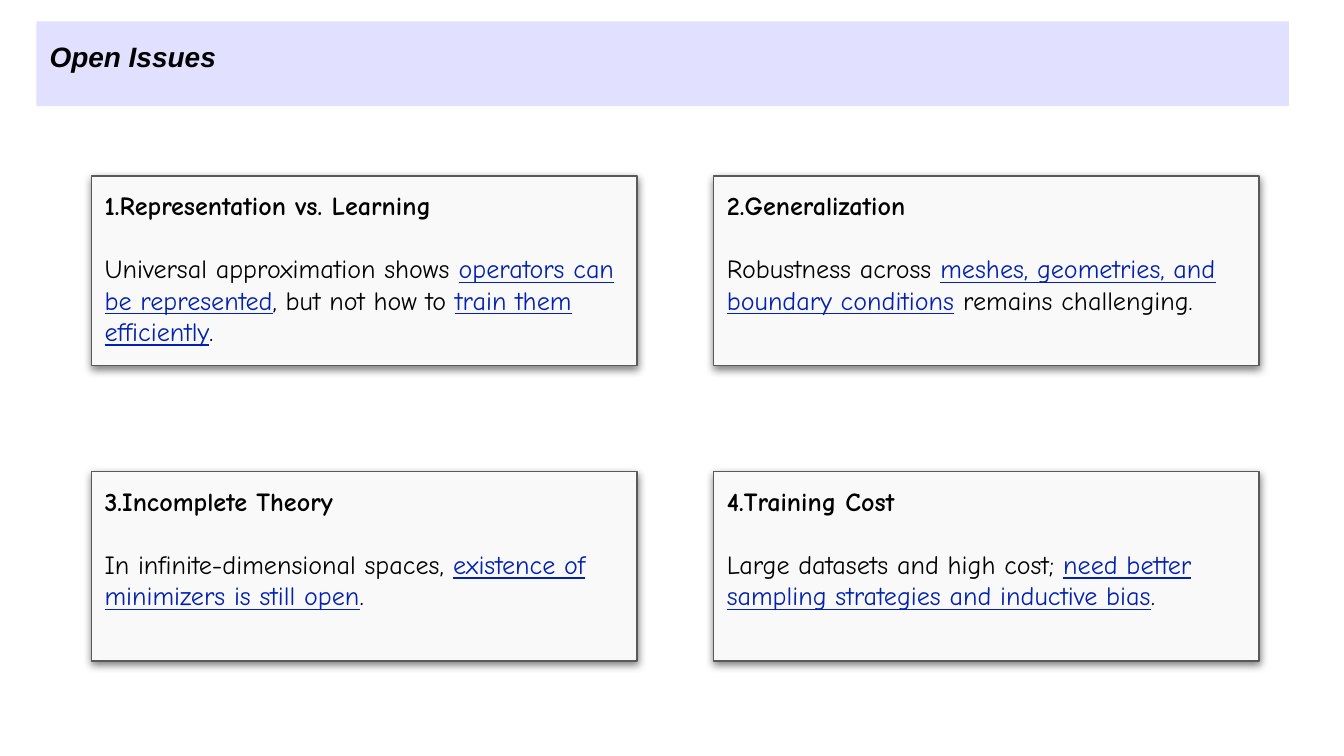
from lxml.etree import SubElement
from pptx import Presentation
from pptx.dml.color import RGBColor
from pptx.enum.shapes import MSO_SHAPE
from pptx.enum.text import MSO_ANCHOR, PP_ALIGN
from pptx.oxml.ns import qn
from pptx.util import Inches, Pt

BLACK = RGBColor(0x00, 0x00, 0x00)
LAVENDER = RGBColor(0xE1, 0xE0, 0xFF)
PAPER = RGBColor(0xF9, 0xF9, 0xF9)
GRAY = RGBColor(0x59, 0x59, 0x59)
BLUE = RGBColor(0x02, 0x20, 0xB2)

# Each issue: heading, then (phrase, is key phrase) pairs
ISSUES = [
    ("1.Representation vs. Learning", [
        ("Universal approximation shows ", False),
        ("operators can be represented", True),
        (", but not how to ", False),
        ("train them efficiently", True),
        (".", False)]),
    ("2.Generalization", [
        ("Robustness across ", False),
        ("meshes, geometries, and boundary conditions", True),
        (" remains challenging.", False)]),
    ("3.Incomplete Theory", [
        ("In infinite-dimensional spaces, ", False),
        ("existence of minimizers is still open", True),
        (".", False)]),
    ("4.Training Cost", [
        ("Large datasets and high cost; ", False),
        ("need better sampling strategies and inductive bias", True),
        (".", False)]),
]


class IssueSlide:
    title_font, title_size = "Arial", Pt(15)
    card_font, card_size = "Comic Neue", Pt(14)
    inset = Inches(0.1)

    def __init__(self, slide):
        self.slide = slide

    def box(self, left, top, width, height, fill):
        """Add a plain rectangle with top-left text."""
        box = self.slide.shapes.add_shape(
            MSO_SHAPE.RECTANGLE, Inches(left), Inches(top),
            Inches(width), Inches(height))
        box.shadow.inherit = False
        box.fill.solid()
        box.fill.fore_color.rgb = fill
        box.line.fill.background()
        frame = box.text_frame
        frame.word_wrap = True
        frame.vertical_anchor = MSO_ANCHOR.TOP
        frame.margin_left = frame.margin_right = self.inset
        frame.margin_top = frame.margin_bottom = self.inset
        frame.paragraphs[0].alignment = PP_ALIGN.LEFT
        return box

    def run(self, paragraph, text, font, size, color=BLACK, bold=False):
        run = paragraph.add_run()
        run.text = text
        run.font.name = font
        run.font.size = size
        run.font.bold = bold
        run.font.color.rgb = color
        return run

    def drop_shadow(self, shape):
        effects = shape.element.spPr.find(qn("a:effectLst"))
        shadow = SubElement(
            effects, qn("a:outerShdw"), blurRad=str(Pt(4.5)),
            dist=str(Pt(1.5)), dir="5400000", algn="bl", rotWithShape="0")
        color = SubElement(shadow, qn("a:srgbClr"), val=str(BLACK))
        SubElement(color, qn("a:alpha"), val="50000")

    def title(self, text):
        banner = self.box(0.27, 0.16, 9.32, 0.63, LAVENDER)
        paragraph = banner.text_frame.paragraphs[0]
        paragraph.line_spacing = 1.15
        run = self.run(paragraph, text, self.title_font, self.title_size,
                       bold=True)
        run.font.italic = True

    def card(self, left, top, heading, phrases):
        card = self.box(left, top, 4.06, 1.41, PAPER)
        card.line.color.rgb = GRAY
        card.line.width = Pt(0.75)
        self.drop_shadow(card)
        frame = card.text_frame
        self.run(frame.paragraphs[0], heading, self.card_font,
                 self.card_size, bold=True)
        body = frame.add_paragraph()
        body.alignment = PP_ALIGN.LEFT
        body.space_before = Pt(17)
        for text, is_key in phrases:
            run = self.run(body, text, self.card_font, self.card_size,
                           BLUE if is_key else BLACK)
            run.font.underline = is_key


def main():
    deck = Presentation()
    # Widescreen, 16:9
    deck.slide_width = Inches(10)
    deck.slide_height = Inches(10 * 9 / 16)
    page = IssueSlide(deck.slides.add_slide(deck.slide_layouts[6]))

    # Title banner
    page.title("Open Issues")

    # Two-by-two grid of issues
    for index, (heading, phrases) in enumerate(ISSUES):
        row, column = divmod(index, 2)
        page.card(0.68 + 4.63 * column, 1.31 + 2.2 * row, heading, phrases)

    deck.save("out.pptx")


if __name__ == "__main__":
    main()
